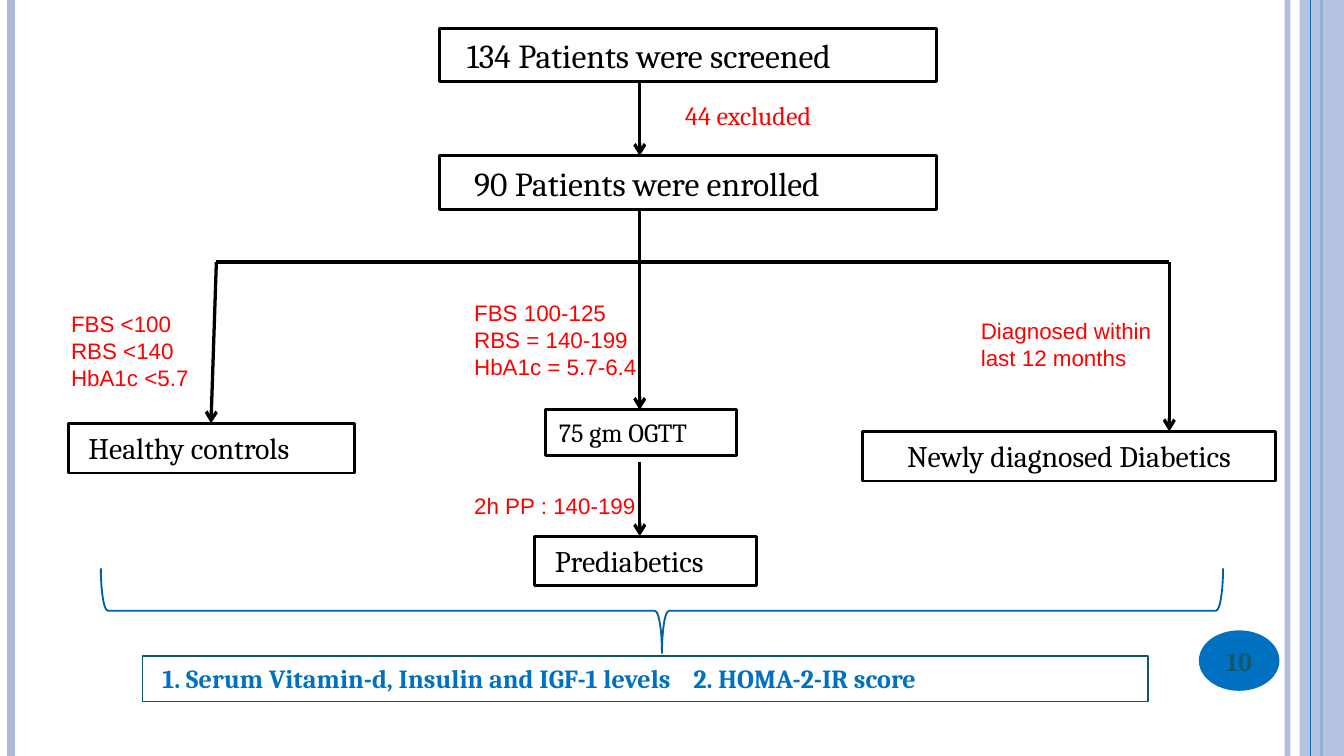
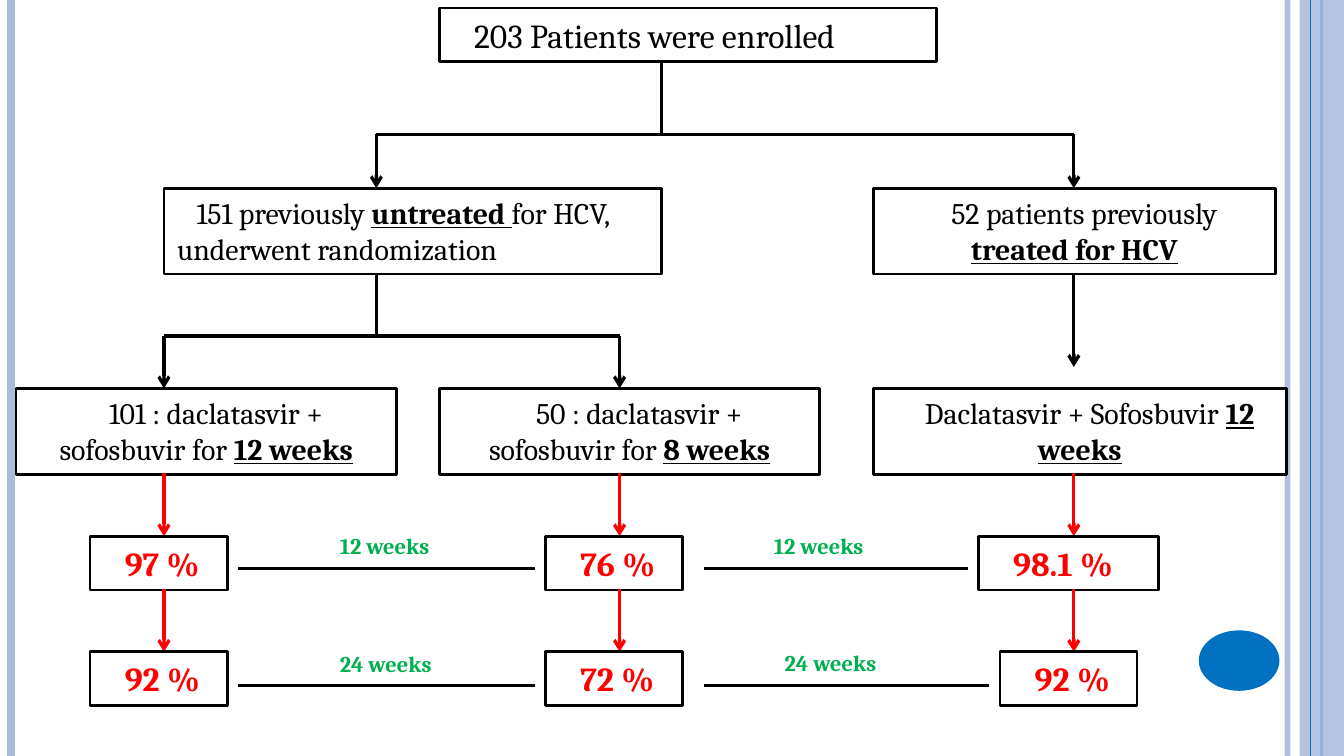
from dataclasses import dataclass

from lxml import etree
from pptx import Presentation
from pptx import util as u
from pptx.dml.color import RGBColor
from pptx.enum import shapes, text
from pptx.oxml.ns import qn

COLUMNS, ROWS = 100, 56.25
CELL = u.Inches(0.1)


@dataclass(frozen=True)
class Theme:
    ink: str = "000000"
    paper: str = "FFFFFF"
    accent: str = "0070C0"
    band: str = "ABBBDC"
    brace: str = "0060A4"
    teal: str = "115964"
    red: str = "FF0000"
    green: str = "00B050"
    serif: str = "Cambria"
    sans: str = "Arial"
    large: int = 18
    medium: int = 16
    small: int = 14
    tiny: int = 12
    outline: float = 1.5
    flow: float = 1.75
    hairline: float = 1


def cells(count):
    return u.Emu(round(count * CELL))


def add_child(parent, tag, **attributes):
    return etree.SubElement(parent, qn(tag), attributes)


def set_opacity(properties, percent):
    color = next(properties.iter(qn("a:srgbClr")))
    add_child(color, "a:alpha", val=str(percent * 1000))


class Chart:
    """Draws flow-chart elements on the current slide, in grid columns and rows."""

    def __init__(self, presentation, theme):
        self.presentation = presentation
        self.theme = theme
        self.slide = None

    def new_slide(self):
        """Add a slide with its bands and return the page badge."""
        theme = self.theme
        self.slide = self.presentation.slides.add_slide(self.presentation.slide_layouts[6])
        self.line(95.8, 0, 95.8, ROWS, theme.band, 3, opacity=93)
        self.line(0.8, 0, 0.8, ROWS, theme.band, 4.5)
        self.line(98.3, 0, 98.3, ROWS, theme.accent, 1.5)
        self.shape(96.7, 0, 3.3, ROWS, fill=theme.band, opacity=87)
        self.line(97.5, 0, 97.5, ROWS, theme.accent, 0.75)
        return self.shape(89.2, 46.9, 6, 4.5, shapes.MSO_SHAPE.OVAL, fill=theme.accent)

    def line(self, x1, y1, x2, y2, color=None, width=None, arrow=False, opacity=None):
        connector = self.slide.shapes.add_connector(
            shapes.MSO_CONNECTOR.STRAIGHT, *map(cells, (x1, y1, x2, y2)))
        connector.line.color.rgb = RGBColor.from_string(color or self.theme.ink)
        connector.line.width = u.Pt(width or self.theme.flow)
        properties = connector._element.spPr
        if opacity:
            set_opacity(properties, opacity)
        if arrow:
            add_child(properties.find(qn("a:ln")), "a:tailEnd", type="arrow")
        add_child(properties, "a:effectLst")

    def arrow(self, x1, y1, x2, y2, color=None):
        self.line(x1, y1, x2, y2, color, arrow=True)

    def shape(self, left, top, width, height, kind=shapes.MSO_SHAPE.RECTANGLE,
              fill=None, outline=None, weight=None, opacity=None):
        shape = self.slide.shapes.add_shape(kind, *map(cells, (left, top, width, height)))
        shape.shadow.inherit = False
        if fill:
            shape.fill.solid()
            shape.fill.fore_color.rgb = RGBColor.from_string(fill)
        else:
            shape.fill.background()
        if opacity:
            set_opacity(shape._element.spPr, opacity)
        if outline:
            shape.line.color.rgb = RGBColor.from_string(outline)
            shape.line.width = u.Pt(weight or self.theme.outline)
        else:
            shape.line.fill.background()
        return shape

    def add_text(self, shape, paragraphs, size, color=None, font=None, bold=False,
                 centred=False, indent=0, tab=None, grow=True):
        """Each paragraph is a list of runs; a run in a tuple is bold and underlined."""
        frame = shape.text_frame
        frame.word_wrap = True
        frame.vertical_anchor = text.MSO_ANCHOR.TOP if grow else text.MSO_ANCHOR.MIDDLE
        if grow:
            frame.auto_size = text.MSO_AUTO_SIZE.SHAPE_TO_FIT_TEXT
        for index, runs in enumerate(paragraphs):
            paragraph = frame.paragraphs[0] if index == 0 else frame.add_paragraph()
            paragraph.alignment = text.PP_ALIGN.CENTER if centred else text.PP_ALIGN.LEFT
            properties = paragraph._p.get_or_add_pPr()
            properties.set("indent", str(cells(indent)))
            if tab:
                stops = add_child(properties, "a:tabLst")
                add_child(stops, "a:tab", pos=str(cells(tab)), algn="l")
            for content in runs:
                strong = isinstance(content, tuple)
                run = paragraph.add_run()
                run.text = content[0] if strong else content
                run.font.name = font or self.theme.serif
                run.font.size = u.Pt(size)
                run.font.color.rgb = RGBColor.from_string(color or self.theme.ink)
                run.font.bold = bold or strong
                run.font.underline = strong

    def box(self, left, top, width, height, runs, size, fill=None, outline=None,
            weight=None, **style):
        shape = self.shape(left, top, width, height, fill=fill,
                           outline=outline or self.theme.ink, weight=weight)
        self.add_text(shape, [runs], size, **style)

    def label(self, left, top, width, height, lines, size, color, **style):
        shape = self.slide.shapes.add_textbox(*map(cells, (left, top, width, height)))
        self.add_text(shape, [[content] for content in lines], size, color, **style)

    def criteria(self, left, top, width, height, lines):
        theme = self.theme
        self.label(left, top, width, height, lines, theme.tiny, theme.red, font=theme.sans)


def build_screening(chart):
    theme = chart.theme
    middle, left_arm, right_arm, branch = 47.6, 16.1, 87, 19.5
    page_badge = chart.new_slide()
    chart.add_text(page_badge, [["10"]], theme.small, theme.teal, bold=True,
                   centred=True, grow=False)

    chart.box(32.7, 2.1, 37, 4, ["134 Patients were screened"], theme.large, indent=1.05)
    chart.arrow(middle, 6.1, middle, 11.6)
    chart.label(50, 6.9, 18.1, 3.4, ["44 excluded"], theme.small, theme.red)
    chart.box(32.7, 11.6, 37, 4, ["90 Patients were enrolled"], theme.large, indent=1.6)

    chart.line(middle, 15.5, middle, 21)
    chart.line(left_arm, branch, right_arm, branch)
    chart.arrow(left_arm, branch, 15.7, 31.5)
    chart.arrow(middle, branch, middle, 30.5)
    chart.arrow(right_arm, branch, right_arm, 32.1)
    chart.criteria(4.3, 22.6, 11.8, 7.1, ["FBS <100", "RBS <140", "HbA1c <5.7"])
    chart.criteria(34.3, 21.8, 15, 7.1,
                   ["FBS 100-125", "RBS = 140-199", "HbA1c = 5.7-6.4"])
    chart.criteria(72, 23.1, 15, 5, ["Diagnosed within last 12 months"])

    chart.box(5.1, 31.5, 21.3, 3.7, ["Healthy controls"], theme.medium, indent=0.5)
    chart.box(40.6, 30.5, 14.2, 3.4, ["75 gm OGTT"], theme.small)
    chart.box(64.2, 32.1, 30.7, 3.7, ["Newly diagnosed Diabetics"], theme.medium,
              centred=True)
    chart.arrow(middle, 34.4, middle, 39.9)
    chart.criteria(34.3, 36.1, 15, 3, ["2h PP : 140-199"])
    chart.box(39.8, 39.9, 16.5, 3.7, ["Prediabetics"], theme.medium, indent=0.5)

    brace = chart.shape(46.1, 3.7, 6.3, 83.5, shapes.MSO_SHAPE.RIGHT_BRACE,
                        outline=theme.brace, weight=theme.hairline)
    brace.rotation = 90
    chart.box(10.6, 48.8, 74.8, 3.4,
              ["1. Serum Vitamin-d, Insulin and IGF-1 levels\t2. HOMA-2-IR score"],
              theme.small, outline=theme.teal, weight=theme.hairline,
              color=theme.accent, bold=True, indent=0.5, tab=42.9)


def build_treatment(chart):
    theme = chart.theme
    chart.new_slide()
    untreated, treated, short_arm, long_arm = 28, 79.9, 46.1, 12.2

    chart.box(32.7, 0.6, 37, 4, ["203 Patients were enrolled"], theme.large, indent=1.6)
    chart.line(49.2, 4.5, 49.2, 10)
    chart.line(untreated, 10, treated, 10)
    chart.line(untreated, 20.3, untreated, 25)
    chart.line(long_arm, 25, short_arm, 25)
    for x, top, bottom in ((untreated, 10, 14), (treated, 10, 14), (long_arm, 25, 28.9),
                           (short_arm, 25, 28.9), (treated, 20.3, 27.3)):
        chart.arrow(x, top, x, bottom)

    chart.box(12.2, 14, 37, 6.4,
              ["151 previously ", ("untreated ",), "for HCV, underwent randomization"],
              theme.medium, indent=1.45)
    chart.box(65, 14, 29.9, 6.4, ["52 patients previously ", ("treated for HCV",)],
              theme.medium, centred=True, indent=1.45)

    arms = (
        (long_arm, 1.2, 28.3, ["101 : daclatasvir + sofosbuvir for ", ("12 weeks",)],
         (("97 %", 10.2), ("92 %", 10.2))),
        (short_arm, 32.7, 28.3, ["50 : daclatasvir + sofosbuvir for ", ("8 weeks",)],
         (("76 %", 10.2), ("72 %", 10.2))),
        (treated, 65, 30.7, ["Daclatasvir + Sofosbuvir ", ("12 weeks",)],
         (("98.1 %", 13.4), ("92 %", 10.2))),
    )
    for centre, left, width, regimen, rates in arms:
        chart.box(left, 28.9, width, 6.4, regimen, theme.medium, centred=True, indent=1.45,
                  fill=theme.paper if centre == treated else None)
        for step, (rate, rate_width) in enumerate(rates):
            top = 39.9 + 8.6 * step
            chart.arrow(centre, top - 4.7, centre, top, theme.red)
            chart.box(centre - rate_width / 2 - 0.4, top, rate_width, 4, [rate],
                      theme.large, color=theme.red, bold=True, indent=1.6)

    for start, end, row, label_left, label_top, period in (
            (17.7, 39.8, 42.3, 23.2, 39.1, "12 weeks"),
            (52.4, 72, 42.3, 55.5, 39.1, "12 weeks"),
            (17.7, 39.8, 51, 23.2, 47.9, "24 weeks"),
            (52.4, 73.6, 51, 56.3, 47.8, "24 weeks")):
        chart.line(start, row, end, row)
        chart.label(label_left, label_top, 11.8, 3, [period], theme.tiny, theme.green,
                    bold=True, indent=1.1)


def main():
    presentation = Presentation()
    presentation.slide_width = cells(COLUMNS)
    presentation.slide_height = cells(ROWS)
    chart = Chart(presentation, Theme())
    build_screening(chart)
    build_treatment(chart)
    presentation.save("out.pptx")


if __name__ == "__main__":
    main()
